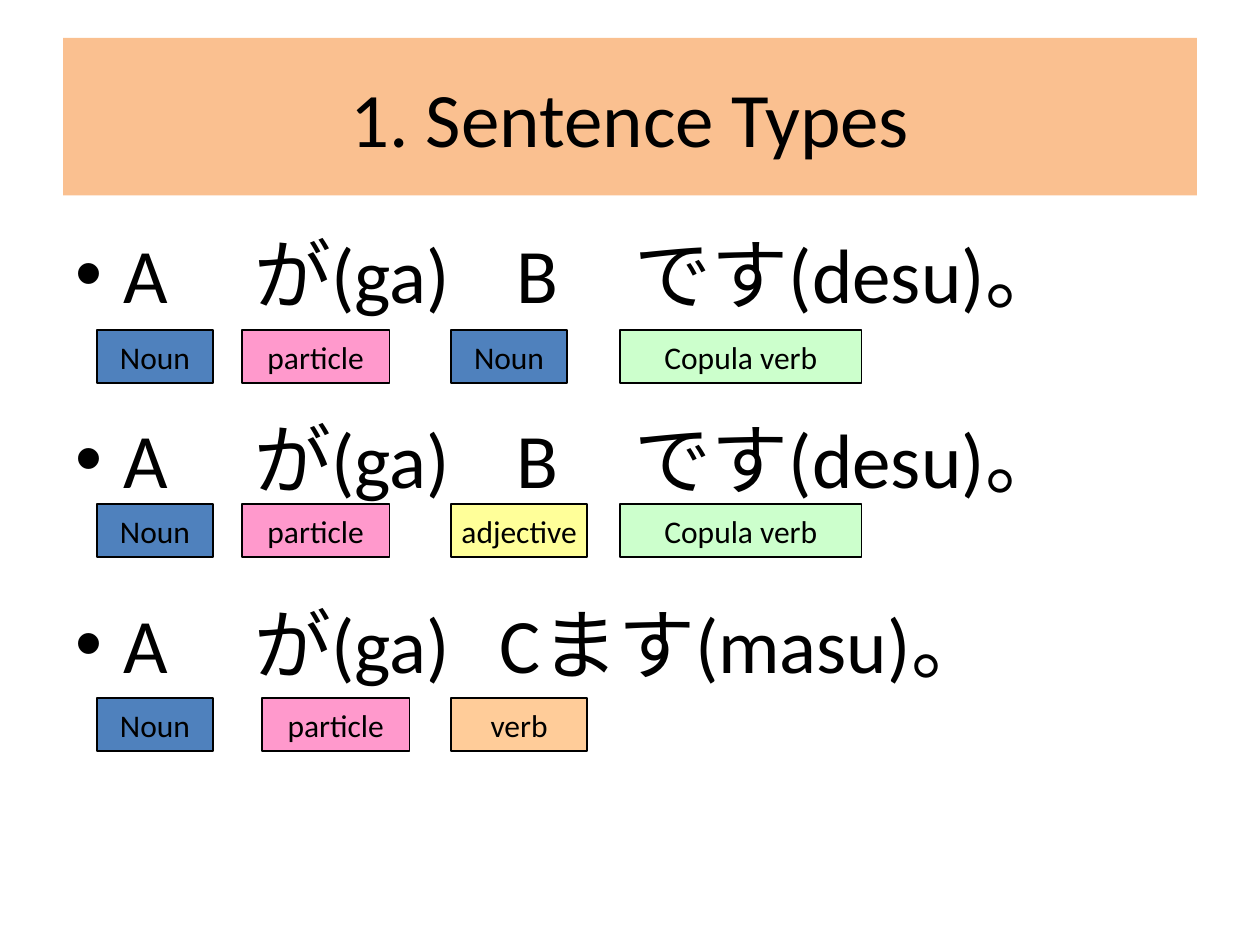
"""Build the slide that labels the parts of three Japanese sentence types."""
from dataclasses import dataclass

import pptx
import pptx.dml.color
import pptx.enum.shapes
import pptx.enum.text
import pptx.oxml.ns
import pptx.util
from lxml import etree
from pptx.util import Inches

COLORS = {
    "title": "FAC090",
    "text": "000000",
    "noun": "4F81BD",
    "particle": "FF99CC",
    "adjective": "FFFF99",
    "copula": "CCFFCC",
    "verb": "FFCC99",
}
LABEL_HEIGHT = 0.42
INDENT = 0.38


@dataclass
class Label:
    text: str
    color: str
    left: float
    width: float


@dataclass
class Sentence:
    text: str
    tabs: tuple[float, ...]
    space_before: float
    label_top: float
    labels: tuple[Label, ...]


NOUN = Label("Noun", "noun", 0.77, 0.92)
PARTICLE = Label("particle", "particle", 1.92, 1.17)
COPULA = Label("Copula verb", "copula", 4.92, 1.92)
COPULA_TEXT = "A\tが(ga)\tB\tです(desu)。"
COPULA_TABS = (1.42, 3.5, 4.44)

SENTENCES = (
    Sentence(COPULA_TEXT, COPULA_TABS, 8.8, 2.62,
             (NOUN, PARTICLE, Label("Noun", "noun", 3.58, 0.92), COPULA)),
    Sentence(COPULA_TEXT, COPULA_TABS, 53, 4,
             (NOUN, PARTICLE, Label("adjective", "adjective", 3.58, 1.08), COPULA)),
    Sentence("A\tが(ga)\tCます(masu)。", (1.42, 3.37), 53, 5.54,
             (NOUN, Label("particle", "particle", 2.08, 1.17),
              Label("verb", "verb", 3.58, 1.08))),
)


def rgb(name: str) -> pptx.dml.color.RGBColor:
    """Return the named colour."""
    return pptx.dml.color.RGBColor.from_string(COLORS[name])


def set_font(font, size: float) -> None:
    """Apply the slide's typeface at the given size."""
    for key, value in {"name": "Calibri", "size": pptx.util.Pt(size)}.items():
        setattr(font, key, value)
    font.color.rgb = rgb("text")


def set_bullet_and_tabs(paragraph, tabs: tuple[float, ...]) -> None:
    """Give a paragraph a hanging bullet and left tab stops."""
    qn = pptx.oxml.ns.qn
    properties = paragraph._p.get_or_add_pPr()
    properties.set("marL", str(Inches(INDENT)))
    properties.set("indent", str(-Inches(INDENT)))
    etree.SubElement(properties, qn("a:buFont"), typeface="Arial")
    etree.SubElement(properties, qn("a:buChar"), char="•")
    stops = etree.SubElement(properties, qn("a:tabLst"))
    for position in tabs:
        etree.SubElement(stops, qn("a:tab"), pos=str(Inches(position)), algn="l")


def add_title(slide) -> None:
    """Format and fill the title placeholder."""
    title = slide.shapes.title
    place = {"left": 0.5, "top": 0.3, "width": 9, "height": 1.25}
    for key, value in place.items():
        setattr(title, key, Inches(value))
    title.fill.solid()
    title.fill.fore_color.rgb = rgb("title")
    frame = title.text_frame
    frame.text = "1. Sentence Types"
    frame.vertical_anchor = pptx.enum.text.MSO_ANCHOR.MIDDLE
    frame.paragraphs[0].alignment = pptx.enum.text.PP_ALIGN.CENTER
    set_font(frame.paragraphs[0].runs[0].font, 44)


def add_sentences(slide) -> None:
    """Write the bulleted sentence patterns."""
    patterns = slide.shapes.add_textbox(
        Inches(0.5), Inches(1.75), Inches(9), Inches(4.95)).text_frame
    patterns.word_wrap = True
    for index, sentence in enumerate(SENTENCES):
        paragraph = patterns.add_paragraph() if index else patterns.paragraphs[0]
        paragraph.space_before = pptx.util.Pt(sentence.space_before)
        set_bullet_and_tabs(paragraph, sentence.tabs)
        run = paragraph.add_run()
        run.text = sentence.text
        set_font(run.font, 44)


def add_label(slide, label: Label, top: float) -> None:
    """Draw one part-of-speech box."""
    box = slide.shapes.add_shape(
        pptx.enum.shapes.MSO_SHAPE.RECTANGLE, Inches(label.left), Inches(top),
        Inches(label.width), Inches(LABEL_HEIGHT))
    box.shadow.inherit = False
    box.fill.solid()
    box.fill.fore_color.rgb = rgb(label.color)
    box.line.color.rgb = rgb("text")
    box.line.width = pptx.util.Pt(0.75)
    frame = box.text_frame
    frame.word_wrap = False
    frame.vertical_anchor = pptx.enum.text.MSO_ANCHOR.MIDDLE
    frame.text = label.text
    frame.paragraphs[0].alignment = pptx.enum.text.PP_ALIGN.CENTER
    set_font(frame.paragraphs[0].runs[0].font, 18)


def main() -> None:
    """Build and save the presentation."""
    deck = pptx.Presentation()
    deck.slide_width, deck.slide_height = Inches(10), Inches(7.5)
    slide = deck.slides.add_slide(deck.slide_layouts[5])
    add_title(slide)
    add_sentences(slide)
    for sentence in SENTENCES:
        for label in sentence.labels:
            add_label(slide, label, sentence.label_top)
    deck.save("out.pptx")


if __name__ == "__main__":
    main()
